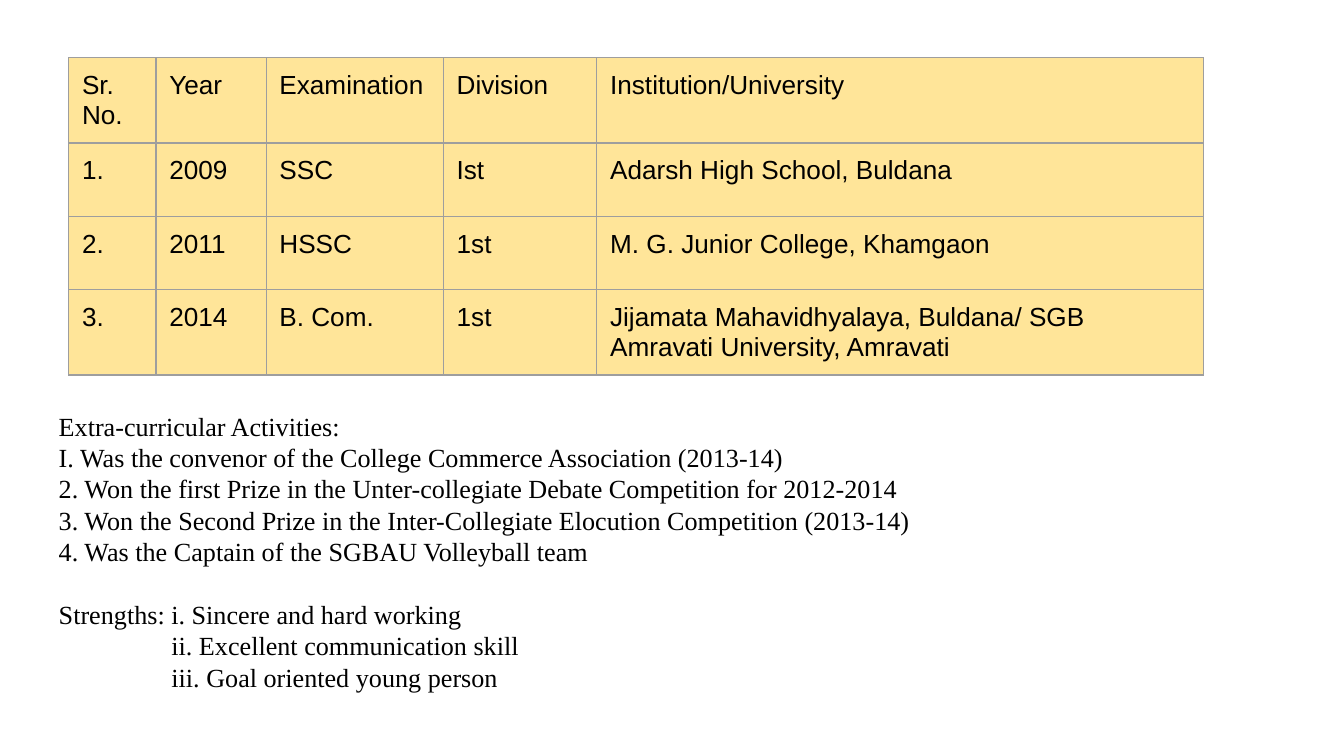
import pptx
import pptx.dml.color
import pptx.enum.text
import pptx.oxml
import pptx.oxml.ns
import pptx.util
from pptx.util import Cm

BLACK = pptx.dml.color.RGBColor(0x00, 0x00, 0x00)
GOLD = pptx.dml.color.RGBColor(0xFF, 0xE5, 0x99)
GREY = pptx.dml.color.RGBColor(0x9E, 0x9E, 0x9E)

HEADS = ["Sr.\nNo.", "Year", "Examination", "Division", "Institution/University"]
EXAMS = [
    ["1.", "2009", "SSC", "Ist", "Adarsh High School, Buldana"],
    ["2.", "2011", "HSSC", "1st", "M. G. Junior College, Khamgaon"],
    ["3.", "2014", "B. Com.", "1st",
     "Jijamata Mahavidhyalaya, Buldana/ SGB Amravati University, Amravati"],
]
WIDTHS = [1.65, 2.08, 3.35, 2.9, 11.46]

ACTS = [
    "Extra-curricular Activities:",
    "I. Was the convenor of the College Commerce Association (2013-14)",
    "2. Won the first Prize in the Unter-collegiate Debate Competition for 2012-2014",
    "3. Won the Second Prize in the Inter-Collegiate Elocution Competition (2013-14)",
    "4. Was the Captain of the SGBAU Volleyball team",
]
SKILLS = [
    "Strengths: i. Sincere and hard working",
    "ii. Excellent communication skill",
    "iii. Goal oriented young person",
]


class Page:
    size = pptx.util.Pt(14)
    pitch = pptx.util.Pt(16.8)
    inset = Cm(0.25)

    def __init__(self, deck):
        self.slide = deck.slides.add_slide(deck.slide_layouts[5])

    def style(self, frame, face):
        for par in frame.paragraphs:
            for run in par.runs:
                run.font.name = face
                run.font.size = self.size
                run.font.color.rgb = BLACK

    def pad(self, item):
        item.margin_left = item.margin_right = self.inset
        item.margin_top = item.margin_bottom = self.inset

    def title(self, left, top, width, height, acts, skills):
        box = self.slide.shapes.title
        box.left, box.top, box.width, box.height = left, top, width, height
        frame = box.text_frame
        self.pad(frame)
        frame.margin_bottom = Cm(0.86)
        frame.word_wrap = True
        frame.auto_size = pptx.enum.text.MSO_AUTO_SIZE.NONE
        frame.vertical_anchor = pptx.enum.text.MSO_ANCHOR.BOTTOM
        frame.text = "\n".join(acts + skills)
        for par in frame.paragraphs:
            par.alignment = pptx.enum.text.PP_ALIGN.LEFT
            par.line_spacing = self.pitch
            par.space_before = par.space_after = pptx.util.Pt(0)
        # One line of space before the strengths, the rest of them indented
        pars = frame.paragraphs[len(acts):]
        pars[0].space_before = self.pitch
        for par in pars[1:]:
            props = par._p.get_or_add_pPr()
            props.set("marL", str(Cm(2.13)))
            props.set("indent", "0")
        self.style(frame, "Times New Roman")

    def edge(self, cell):
        props = cell._tc.get_or_add_tcPr()
        for spot, side in enumerate(("lnL", "lnR", "lnT", "lnB")):
            line = pptx.oxml.parse_xml(
                f'<a:{side} {pptx.oxml.ns.nsdecls("a")} w="{pptx.util.Pt(0.75)}">'
                f'<a:solidFill><a:srgbClr val="{GREY}"/></a:solidFill></a:{side}>')
            props.insert(spot, line)

    def table(self, left, top, widths, high, rows):
        grid = self.slide.shapes.add_table(
            len(rows), len(widths), left, top, Cm(sum(widths)), high * len(rows)).table
        grid.first_row = grid.horz_banding = False
        for col, width in zip(grid.columns, widths):
            col.width = Cm(width)
        for row, texts in zip(grid.rows, rows):
            row.height = high
            for cell, text in zip(row.cells, texts):
                cell.text_frame.text = text
                self.pad(cell)
                cell.fill.solid()
                cell.fill.fore_color.rgb = GOLD
                self.edge(cell)
                self.style(cell.text_frame, "Arial")


def main():
    deck = pptx.Presentation()
    deck.slide_width, deck.slide_height = Cm(25.4), Cm(14.29)
    page = Page(deck)
    # Activities and strengths
    page.title(Cm(0.86), Cm(0.56), Cm(23.67), Cm(13.39), ACTS, SKILLS)
    # Examination record
    page.table(Cm(1.3), Cm(1.09), WIDTHS, Cm(1.39), [HEADS] + EXAMS)
    deck.save("out.pptx")


if __name__ == "__main__":
    main()
